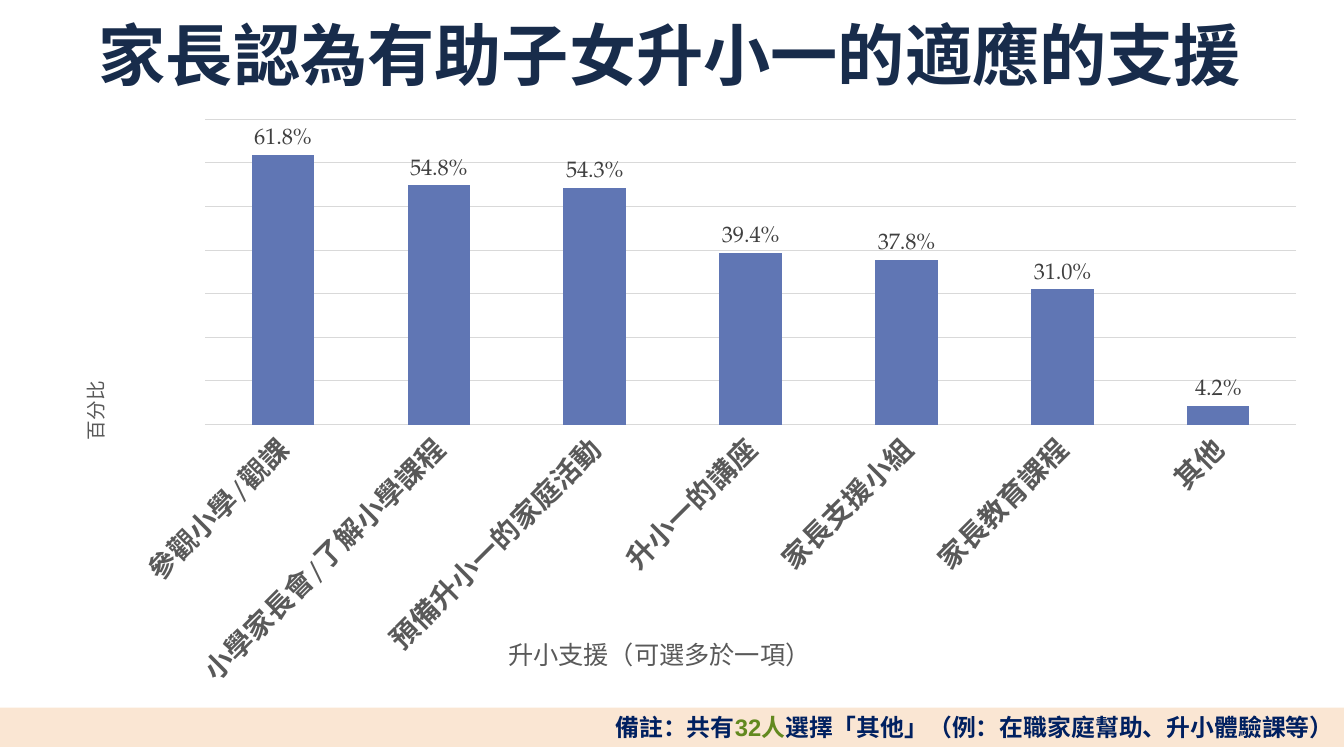
from dataclasses import dataclass

from lxml import etree
from pptx import Presentation
from pptx import util as u
from pptx.chart import data as chart_data
from pptx.dml.color import RGBColor
from pptx.enum import chart as charts
from pptx.enum import shapes, text
from pptx.oxml import ns


@dataclass(frozen=True)
class Theme:
    heading_font: str = "TeX Gyre Pagella"
    note_font: str = "Arial"
    white: str = "FFFFFF"
    title: str = "182C4B"
    band: str = "FAE6D3"
    note: str = "002060"
    highlight: str = "63891F"
    bar: str = "6076B4"
    grid: str = "D9D9D9"
    axis_text: str = "595959"
    label_text: str = "404040"
    title_size: int = 48
    note_size: int = 17
    category_size: int = 20
    label_size: int = 16
    category_title_size: int = 18
    value_title_size: int = 14


@dataclass(frozen=True)
class Box:
    left: float
    top: float
    width: float
    height: float

    def lengths(self) -> tuple:
        return tuple(u.Inches(n) for n in (self.left, self.top, self.width, self.height))


@dataclass(frozen=True)
class Support:
    name: str
    share: float


@dataclass(frozen=True)
class NoteRun:
    words: str
    color: str


THEME = Theme()
TITLE_BOX = Box(-0.04, 0.06, 13.37, 0.92)
NOTE_BOX = Box(-0.04, 7.02, 13.37, 0.39)
CHART_BOX = Box(0.45, 1.05, 12.66, 6.63)
PLOT_BOX = Box(2.03, 1.18, 10.83, 3.03)

SUPPORTS = [
    Support("參觀小學/觀課", 0.618),
    Support("小學家長會/了解小學課程", 0.548),
    Support("預備升小一的家庭活動", 0.543),
    Support("升小一的講座", 0.394),
    Support("家長支援小組", 0.378),
    Support("家長教育課程", 0.31),
    Support("其他", 0.042),
]
NOTE = [
    NoteRun("備註：共有", THEME.note),
    NoteRun("32人", THEME.highlight),
    NoteRun("選擇「其他」（例：在職家庭幫助、升小體驗課等）", THEME.note),
]


def rgb(color: str) -> RGBColor:
    return RGBColor.from_string(color)


def style_font(font, name: str, size: int, color: str, bold: bool = False) -> None:
    font.name, font.size, font.bold = name, u.Pt(size), bold
    font.color.rgb = rgb(color)


def fill_solid(shape, color: str) -> None:
    shape.fill.solid()
    shape.fill.fore_color.rgb = rgb(color)


def set_layout(parent, **settings) -> None:
    """Give a chart part a manual layout in fractions of the chart."""
    layout = parent.find(ns.qn("c:layout"))
    if layout is None:
        layout = etree.Element(ns.qn("c:layout"))
        text_part = parent.find(ns.qn("c:tx"))
        parent.insert(0 if text_part is None else parent.index(text_part) + 1, layout)
    for child in list(layout):
        layout.remove(child)
    manual = etree.SubElement(layout, ns.qn("c:manualLayout"))
    for key, value in settings.items():
        etree.SubElement(manual, ns.qn(f"c:{key}"), val=str(value))


def add_axis_title(axis, words: str, size: int, left: float, top: float) -> None:
    axis.has_title = True
    frame = axis.axis_title.text_frame
    frame.text = words
    style_font(frame.paragraphs[0].font, THEME.heading_font, size, THEME.axis_text)
    set_layout(axis.axis_title._element, xMode="edge", yMode="edge",
               x=round((left - CHART_BOX.left) / CHART_BOX.width, 3),
               y=round((top - CHART_BOX.top) / CHART_BOX.height, 3))


def add_title(slide) -> None:
    title = slide.shapes.title
    title.left, title.top, title.width, title.height = TITLE_BOX.lengths()
    fill_solid(title, THEME.white)
    color = title.fill._xPr.find(".//" + ns.qn("a:srgbClr"))
    etree.SubElement(color, ns.qn("a:alpha"), val="70000")
    frame = title.text_frame
    frame.text = "家長認為有助子女升小一的適應的支援"
    frame.vertical_anchor = text.MSO_ANCHOR.BOTTOM
    paragraph = frame.paragraphs[0]
    paragraph.alignment = text.PP_ALIGN.CENTER
    paragraph.line_spacing = u.Pt(58)
    style_font(paragraph.font, THEME.heading_font, THEME.title_size, THEME.title, True)


def add_note(slide) -> None:
    band = slide.shapes.add_shape(shapes.MSO_SHAPE.RECTANGLE, *NOTE_BOX.lengths())
    band.shadow.inherit = False
    fill_solid(band, THEME.band)
    band.line.fill.background()
    band.text_frame.word_wrap = True
    paragraph = band.text_frame.paragraphs[0]
    paragraph.alignment = text.PP_ALIGN.RIGHT
    for part in NOTE:
        run = paragraph.add_run()
        run.text = part.words
        style_font(run.font, THEME.note_font, THEME.note_size, part.color, True)


def add_support_chart(slide) -> None:
    data = chart_data.CategoryChartData(number_format="0.0%")
    data.categories = [support.name for support in SUPPORTS]
    data.add_series("Series 1", [support.share for support in SUPPORTS])
    chart = slide.shapes.add_chart(
        charts.XL_CHART_TYPE.COLUMN_CLUSTERED, *CHART_BOX.lengths(), data).chart
    chart.has_legend = chart.has_title = False
    style_font(chart.font, THEME.heading_font, 12, THEME.axis_text)
    set_layout(chart._chartSpace.chart.plotArea, layoutTarget="inner",
               xMode="edge", yMode="edge",
               x=round((PLOT_BOX.left - CHART_BOX.left) / CHART_BOX.width, 3),
               y=round((PLOT_BOX.top - CHART_BOX.top) / CHART_BOX.height, 3),
               w=round(PLOT_BOX.width / CHART_BOX.width, 3),
               h=round(PLOT_BOX.height / CHART_BOX.height, 3))

    # Columns and their labels
    plot = chart.plots[0]
    plot.gap_width, plot.vary_by_categories = 150, False
    fill_solid(plot.series[0].format, THEME.bar)
    plot.has_data_labels = True
    labels = plot.data_labels
    labels.show_value = True
    labels.position = charts.XL_LABEL_POSITION.OUTSIDE_END
    labels.number_format, labels.number_format_is_linked = "0.0%", False
    style_font(labels.font, THEME.heading_font, THEME.label_size, THEME.label_text)

    # Category axis with slanted names
    names = chart.category_axis
    names.major_tick_mark = charts.XL_TICK_MARK.NONE
    style_font(names.tick_labels.font, THEME.heading_font, THEME.category_size,
               THEME.axis_text, True)
    names._element.find(ns.qn("c:txPr")).find(ns.qn("a:bodyPr")).set("rot", "-2700000")
    add_axis_title(names, "升小支援（可選多於一項）", THEME.category_title_size, 5.0, 6.22)

    # Hidden value axis with visible grid
    values = chart.value_axis
    values.minimum_scale, values.maximum_scale, values.major_unit = 0, 0.7, 0.1
    values.has_major_gridlines = True
    for line in (names.format.line, values.major_gridlines.format.line):
        line.color.rgb, line.width = rgb(THEME.grid), u.Pt(0.75)
    add_axis_title(values, "百分比", THEME.value_title_size, 0.74, 3.74)
    body = values.axis_title.text_frame._txBody.find(ns.qn("a:bodyPr"))
    body.set("rot", "-5400000")
    body.set("vert", "horz")
    values.visible = False


def main() -> None:
    presentation = Presentation()
    presentation.slide_width, presentation.slide_height = u.Inches(13.33), u.Inches(7.5)
    slide = presentation.slides.add_slide(presentation.slide_layouts[5])
    add_title(slide)
    add_note(slide)
    add_support_chart(slide)
    presentation.save("out.pptx")


if __name__ == "__main__":
    main()
